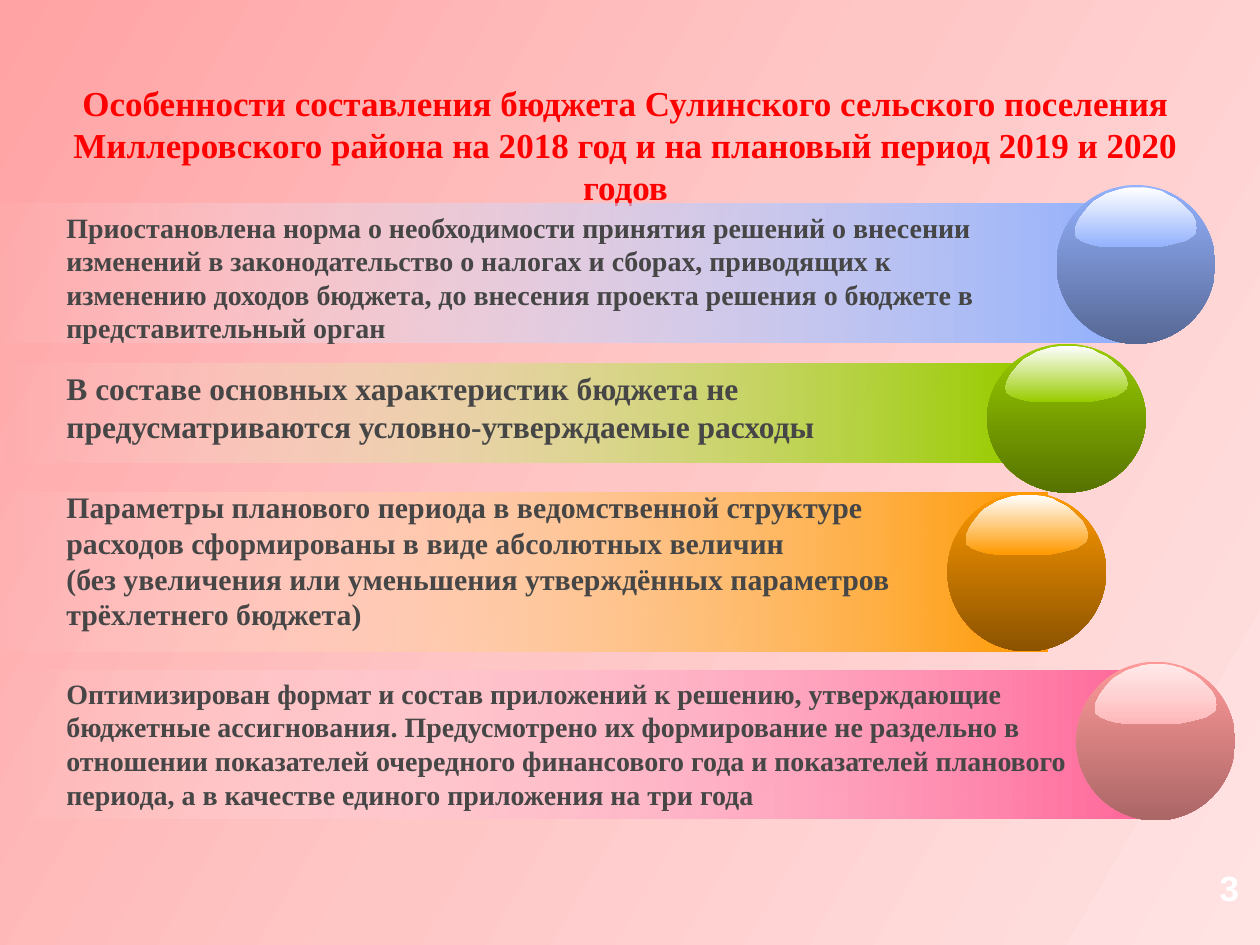
"""Builds the slide on how the settlement budget was drawn up."""
import dataclasses

import lxml.etree
import pptx
import pptx.dml.color
import pptx.enum.shapes
import pptx.enum.text
import pptx.oxml.ns
import pptx.util

Cm = pptx.util.Cm
SHAPE = pptx.enum.shapes.MSO_SHAPE
ALIGN = pptx.enum.text.PP_ALIGN


@dataclasses.dataclass(frozen=True)
class Theme:
    """Holds colours, fonts and type sizes."""
    serif: str = "Times New Roman"
    sans: str = "Arial"
    red: str = "FF0000"
    grey: str = "464646"
    white: str = "FFFFFF"
    blue: str = "93B1FD"
    green: str = "99CC00"
    amber: str = "FF9900"
    rose: str = "FF6699"
    coral: str = "FF9999"
    title: int = 20
    large: int = 18
    mid: int = 17
    small: int = 16
    back: tuple = ((0, "FFA3A4"), (50, "FFC6C6"), (100, "FFE3E3"))
    blush: tuple = ((0, "FFE9E9"), (50, "FFD2D3"), (100, "FFB7B9"))


GLOSS = [
    (96, 27), (97, 32), (96, 36), (94, 38), (91, 40), (88, 42), (84, 43), (76, 45),
    (66, 47), (59, 47), (35, 47), (26, 47), (17, 46), (10, 44), (5, 42), (1, 39),
    (0, 35), (1, 30), (4, 24), (7, 20), (11, 15), (15, 11), (20, 8), (25, 5),
    (31, 3), (37, 1), (43, 0), (49, 0), (56, 0), (62, 1), (69, 3), (74, 6),
    (80, 9), (85, 13), (89, 17), (93, 21),
]


def apply(item, style):
    """Sets each attribute named in the style."""
    for name, value in style.items():
        setattr(item, name, value)


class Deck:
    """Holds the style and the current slide."""

    def __init__(self, theme):
        """Opens a blank slide."""
        self.theme = theme
        self.file = pptx.Presentation()
        apply(self.file, {"slide_width": Cm(25.4), "slide_height": Cm(19.05)})
        self.slide = self.file.slides.add_slide(self.file.slide_layouts[6])

    def blend(self, owner, fill, stops, angle):
        """Fills with gradient stops of place, colour and an optional change."""
        fill.gradient()
        fill.gradient_angle = (360 - angle) % 360
        name = pptx.oxml.ns.qn
        chain = owner.element.find(".//" + name("a:gsLst"))
        for old in list(chain):
            chain.remove(old)
        for place, shade, *change in stops:
            stop = lxml.etree.SubElement(chain, name("a:gs"), pos=str(place * 1000))
            tint = lxml.etree.SubElement(stop, name("a:srgbClr"), val=shade)
            if change:
                kind, value = change
                lxml.etree.SubElement(tint, name("a:" + kind), val=str(value * 1000))

    def backdrop(self):
        """Paints the slide background."""
        self.blend(self.slide, self.slide.background.fill, self.theme.back, 30)

    def finish(self, shape, stops, angle):
        """Gives a shape its gradient and drops its line and shadow."""
        shape.shadow.inherit = False
        shape.line.fill.background()
        self.blend(shape, shape.fill, stops, angle)

    def bar(self, box, shade):
        """Adds a band that fades in from the left."""
        shape = self.slide.shapes.add_shape(SHAPE.RECTANGLE, *map(Cm, box))
        self.finish(shape, ((0, self.theme.white, "alpha", 0), (100, shade)), 0)

    def ball(self, left, top, height, shade, depth, shine):
        """Adds a shaded ball with a gloss on top."""
        group = self.slide.shapes.add_group_shape().shapes
        disc = group.add_shape(SHAPE.OVAL, Cm(left), Cm(top), Cm(3.2), Cm(height))
        self.finish(disc, ((0, shade), (100, shade, "shade", depth)), 90)
        ratio = height / 3.2
        points = [
            (Cm(left + 0.37 + 2.46 * x / 97), Cm(top + (0.05 + 1.2 * y / 47) * ratio))
            for x, y in GLOSS
        ]
        pen = group.build_freeform(*points[0])
        pen.add_line_segments(points[1:], close=True)
        self.finish(pen.convert_to_shape(), shine, 90)

    def text(self, box, words, size, shade, font=None, align=ALIGN.LEFT):
        """Adds a wrapped text box in bold type."""
        frame = self.slide.shapes.add_textbox(*map(Cm, box)).text_frame
        frame.text = words
        apply(frame, {
            "word_wrap": True,
            "auto_size": pptx.enum.text.MSO_AUTO_SIZE.SHAPE_TO_FIT_TEXT,
        })
        style = {"size": pptx.util.Pt(size), "bold": True, "name": font or self.theme.serif}
        for para in frame.paragraphs:
            para.alignment = align
            for run in para.runs:
                apply(run.font, style)
                run.font.color.rgb = pptx.dml.color.RGBColor.from_string(shade)


def main():
    """Builds and saves the slide."""
    theme = Theme()
    deck = Deck(theme)
    deck.backdrop()
    deck.text(
        (0.71, 1.52, 23.8, 2.82),
        "Особенности составления бюджета Сулинского сельского поселения "
        "Миллеровского района на 2018 год и на плановый период 2019 и 2020 годов",
        theme.title, theme.red, align=ALIGN.CENTER,
    )
    rows = [
        ((-0.71, 4.11, 23.39, 2.79), theme.blue,
         (21.3, 3.73, 3.2, theme.blue, 30), ((0, theme.white), (100, theme.blue)),
         (1.09, 4.11, 19.41, 3), theme.small,
         "Приостановлена норма о необходимости принятия решений о внесении изменений "
         "в законодательство о налогах и сборах, приводящих к изменению доходов бюджета, "
         "до внесения проекта решения о бюджете в представительный орган"),
        ((0, 7.32, 20.5, 2.01), theme.green,
         (19.9, 6.93, 3, theme.green, 27), ((0, theme.white), (100, theme.green)),
         (1.09, 7.32, 18.39, 1.8), theme.large,
         "В составе основных характеристик бюджета не предусматриваются "
         "условно-утверждаемые расходы"),
        ((-0.3, 9.93, 21.41, 3.2), theme.amber,
         (19.1, 9.93, 3.2, theme.amber, 25), ((0, theme.white), (100, theme.amber)),
         (1.09, 9.73, 19.61, 3.84), theme.mid,
         "Параметры планового периода в ведомственной структуре\n"
         "расходов сформированы в виде абсолютных величин \v"
         "(без увеличения или уменьшения утверждённых параметров трёхлетнего бюджета)"),
        ((0, 13.51, 23.09, 3), theme.rose,
         (21.7, 13.34, 3.2, theme.coral, 40), theme.blush,
         (1.09, 13.51, 20.8, 3), theme.small,
         "Оптимизирован формат и состав приложений к решению, утверждающие бюджетные "
         "ассигнования. Предусмотрено их формирование не раздельно в отношении "
         "показателей очередного финансового года и показателей планового периода, "
         "а в качестве единого приложения на три года"),
    ]
    for band, shade, ball, shine, box, size, words in rows:
        deck.bar(band, shade)
        deck.ball(*ball, shine)
        deck.text(box, words, size, theme.grey)
    deck.text((23.2, 17.35, 2.03, 1.1), "3", theme.title, theme.white, theme.sans, ALIGN.RIGHT)
    deck.file.save("out.pptx")


if __name__ == "__main__":
    main()
